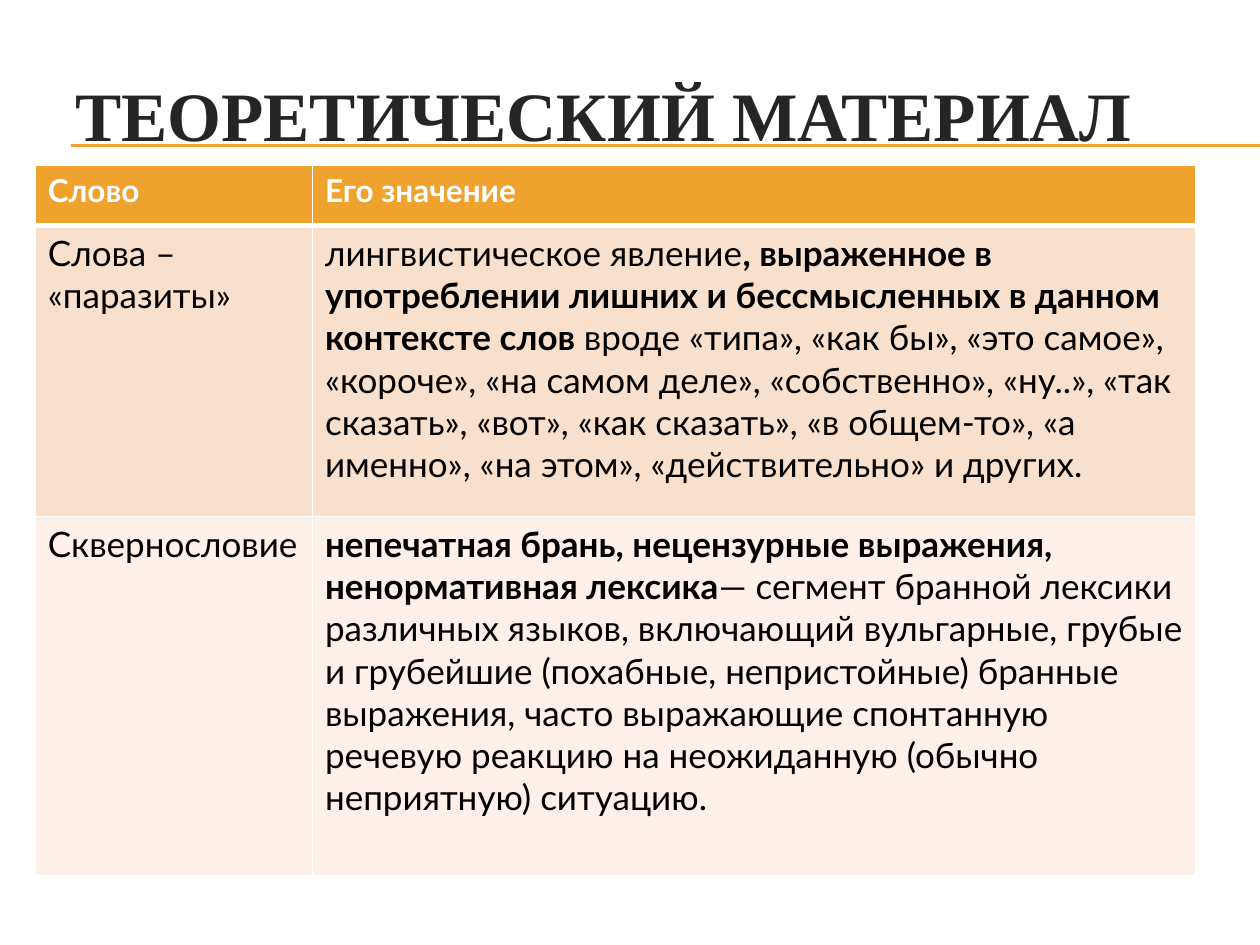
from lxml.etree import SubElement
from pptx import Presentation
from pptx.dml.color import RGBColor
from pptx.enum.shapes import MSO_CONNECTOR
from pptx.enum.text import MSO_ANCHOR
from pptx.oxml.ns import qn
from pptx.util import Inches, Pt


def color(hex_str):
    return RGBColor.from_string(hex_str)


class Deck:
    ACCENT, DARK, BLACK, WHITE = "F0A22E", "252525", "000000", "FFFFFF"
    BANDS = ("F9E0CD", "FCF0E8")
    TITLE_FONT, BODY_FONT = "Times New Roman", "Lato"

    def __init__(self, prs):
        self.s = prs.slides.add_slide(prs.slide_layouts[6])

    def run(self, p, text, font, size, hex_str, bold=False):
        r = p.add_run()
        r.text = text
        r.font.name, r.font.size, r.font.bold = font, Pt(size), bold
        r.font.color.rgb = color(hex_str)

    def line(self, x1, x2, y):
        ln = self.s.shapes.add_connector(
            MSO_CONNECTOR.STRAIGHT, Inches(x1), Inches(y), Inches(x2), Inches(y))
        ln.line.color.rgb = color(self.ACCENT)
        ln.line.width = Pt(0.75)
        SubElement(ln._element.spPr, qn("a:effectLst"))

    def title(self, text, x, y, w, h):
        tf = self.s.shapes.add_textbox(
            Inches(x), Inches(y), Inches(w), Inches(h)).text_frame
        tf.word_wrap = True
        tf.vertical_anchor = MSO_ANCHOR.MIDDLE
        p = tf.paragraphs[0]
        p.line_spacing = 1.5
        p.space_before = p.space_after = Pt(6)
        self.run(p, text, self.TITLE_FONT, 39.6, self.DARK, True)

    def border(self, cell, side, width):
        ln = SubElement(cell._tc.get_or_add_tcPr(), qn(f"a:ln{side}"), w=str(Pt(width)))
        fill = SubElement(ln, qn("a:solidFill"))
        SubElement(fill, qn("a:srgbClr"), val=self.WHITE)

    def cell(self, cell, runs, row):
        header = row == 0
        thick = {"B": 3} if header else {"T": 3} if row == 1 else {}
        for side in "LRTB":
            self.border(cell, side, thick.get(side, 1))
        cell.fill.solid()
        cell.fill.fore_color.rgb = color(
            self.ACCENT if header else self.BANDS[(row - 1) % 2])
        p = cell.text_frame.paragraphs[0]
        for text, bold in runs:
            self.run(p, text, self.BODY_FONT, 18 if header else 20,
                     self.WHITE if header else self.BLACK, bold)

    def table(self, x, y, widths, heights, rows):
        tbl = self.s.shapes.add_table(
            len(heights), len(widths), Inches(x), Inches(y),
            Inches(sum(widths)), Inches(sum(heights))).table
        for col, w in zip(tbl.columns, widths):
            col.width = Inches(w)
        for i, (row, h) in enumerate(zip(tbl.rows, heights)):
            row.height = Inches(h)
            for cell, runs in zip(row.cells, rows[i]):
                self.cell(cell, runs, i)


# Each cell is a list of (text, bold) runs
ROWS = [
    [[("Слово", True)], [("Его значение", True)]],
    [[("Слова – «паразиты»", False)],
     [("лингвистическое явление", False),
      (", выраженное в употреблении лишних и бессмысленных "
       "в данном контексте слов ", True),
      ("вроде «типа», «как бы», «это самое», «короче», «на самом деле», "
       "«собственно», «ну..», «так сказать», «вот», «как сказать», "
       "«в общем-то», «а именно», «на этом», «действительно» и других.", False)]],
    [[("Сквернословие", False)],
     [("непечатная брань, нецензурные выражения, ненормативная лексика", True),
      ("— сегмент бранной лексики различных языков, включающий вульгарные, "
       "грубые и грубейшие (похабные, непристойные) бранные выражения, часто "
       "выражающие спонтанную речевую реакцию на неожиданную "
       "(обычно неприятную) ситуацию.", False)]],
]


def main():
    prs = Presentation()
    prs.slide_width, prs.slide_height = Inches(10), Inches(7.5)
    deck = Deck(prs)

    # Double rule under the title
    for y in (1.15, 1.16):
        deck.line(0.56, 10, y)

    # Title
    deck.title("ТЕОРЕТИЧЕСКИЙ МАТЕРИАЛ", 0.5, 0.17, 9, 1.14)

    # Table of terms
    deck.table(0.28, 1.31, (2.2, 7.01), (0.48, 2.31, 2.85), ROWS)

    prs.save("out.pptx")


if __name__ == "__main__":
    main()
